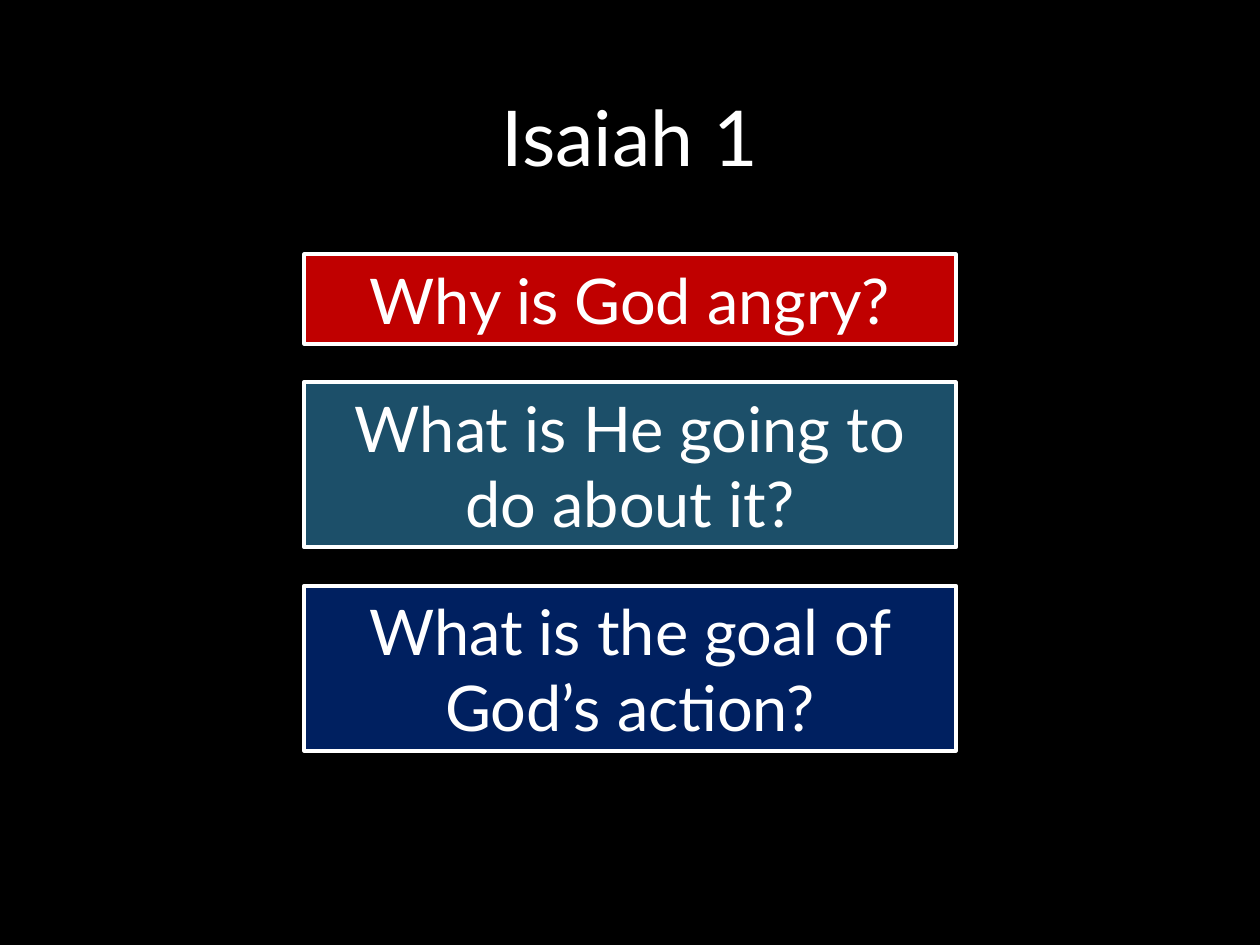
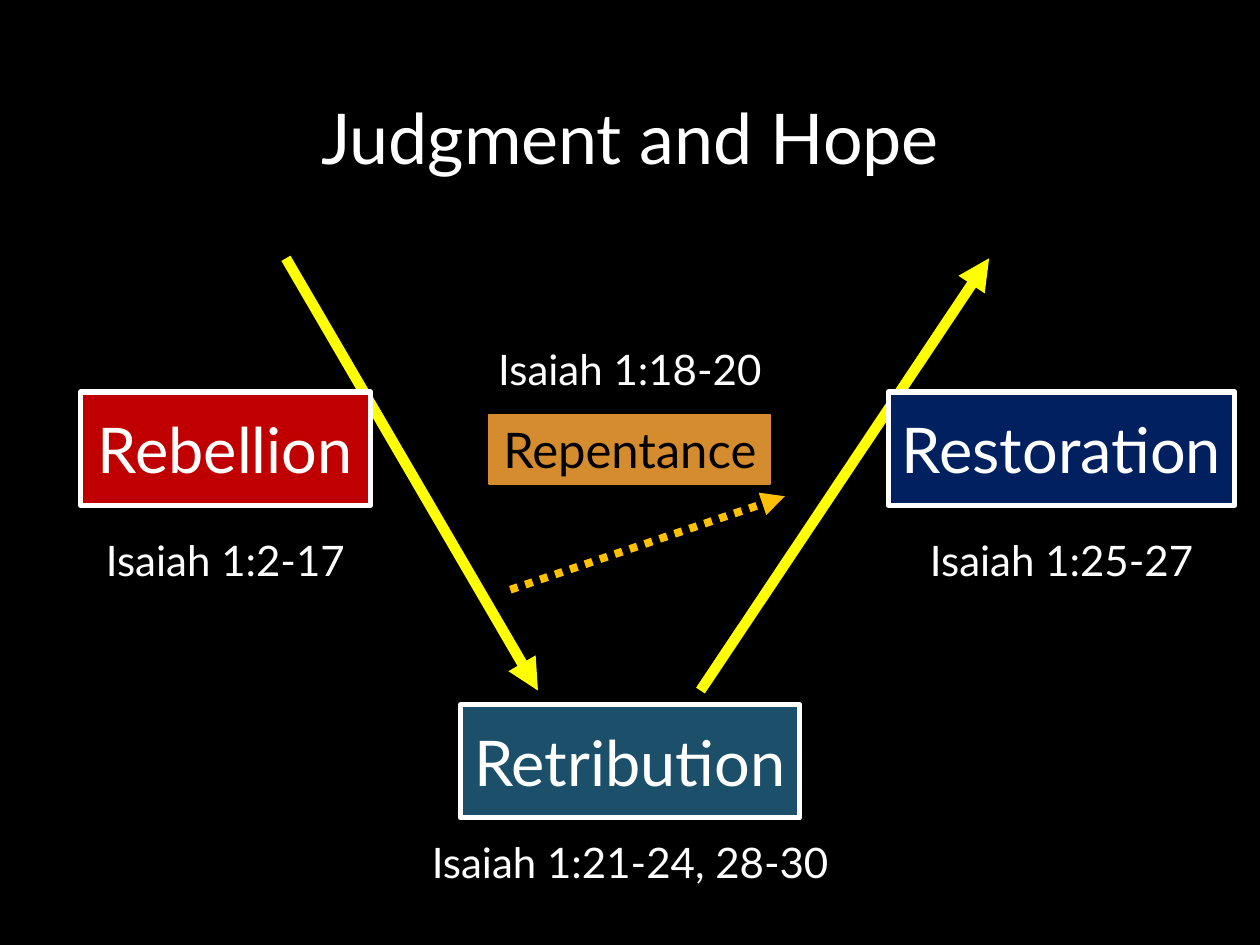
from lxml import etree
from pptx import Presentation
from pptx.dml.color import RGBColor
from pptx.enum.dml import MSO_LINE
from pptx.enum.shapes import MSO_CONNECTOR, MSO_SHAPE
from pptx.enum.text import MSO_ANCHOR, PP_ALIGN
from pptx.oxml.ns import qn
from pptx.util import Pt

WIDTH, HEIGHT = 720, 540
FONT = "Lato"
BLACK, WHITE = "000000", "FFFFFF"
RED, TEAL, NAVY = "C00000", "1C4F69", "002060"
OCHRE, AMBER, YELLOW = "D58C2E", "FFC000", "FFFF00"
TITLE_BOX = (49.7, 28.8, 620.6, 104.4)


def rgb(color):
    return RGBColor.from_string(color)


def write(sp, text, size, color=WHITE, spacing=1.0):
    tf = sp.text_frame
    tf.word_wrap = True
    tf.vertical_anchor = MSO_ANCHOR.MIDDLE
    p = tf.paragraphs[0]
    for name, value in {"alignment": PP_ALIGN.CENTER, "line_spacing": spacing}.items():
        setattr(p, name, value)
    r = p.add_run()
    r.text = text
    for name, value in {"name": FONT, "size": Pt(size)}.items():
        setattr(r.font, name, value)
    r.font.color.rgb = rgb(color)


def add_text(s, box, text, size, spacing=1.0):
    write(s.shapes.add_textbox(*map(Pt, box)), text, size, spacing=spacing)


def add_block(s, box, text, fill, size=36, color=WHITE, line=WHITE, weight=3):
    sp = s.shapes.add_shape(MSO_SHAPE.RECTANGLE, *map(Pt, box))
    sp.shadow.inherit = False
    sp.fill.solid()
    sp.fill.fore_color.rgb = rgb(fill)
    sp.line.color.rgb = rgb(line)
    sp.line.width = Pt(weight)
    write(sp, text, size, color)


def add_arrow(s, start, end, color, weight, dash=None):
    c = s.shapes.add_connector(MSO_CONNECTOR.STRAIGHT, *map(Pt, start + end))
    c.line.color.rgb = rgb(color)
    c.line.width = Pt(weight)
    if dash:
        c.line.dash_style = dash
    props = c._element.spPr
    etree.SubElement(props.find(qn("a:ln")), qn("a:tailEnd"), type="triangle")
    etree.SubElement(props, qn("a:effectLst"))


def add_slide(prs, title, size):
    s = prs.slides.add_slide(prs.slide_layouts[6])
    s.background.fill.solid()
    s.background.fill.fore_color.rgb = rgb(BLACK)
    add_text(s, TITLE_BOX, title, size, spacing=0.9)
    return s


def add_questions(s, left, top, width, gap=22):
    """Stack the questions, each as tall as its lines of text need."""
    for text, fill, height in (
        ("Why is God angry?", RED, 51),
        ("What is He going to do about it?", TEAL, 94.3),
        ("What is the goal of God’s action?", NAVY, 94.3),
    ):
        add_block(s, (left, top, width, height), text, fill, weight=2.25)
        top += height + gap


def add_stage(s, box, name, fill, verses, gap, above=False, **style):
    """Draw a block with its verses centred below or above it."""
    left, top, width, height = box
    add_block(s, box, name, fill, **style)
    label_width, label_height = 248, 36
    label_top = top - gap - label_height if above else top + height + gap
    label_left = left + (width - label_width) / 2
    add_text(s, (label_left, label_top, label_width, label_height), verses, 24)


def add_valley(s, left, top):
    """Draw the descent to retribution and the rise to restoration."""
    def at(x, y, *size):
        return (left + x, top + y, *size)

    add_arrow(s, at(117.4, 0), at(261.4, 247), YELLOW, 6)
    add_arrow(s, at(354.3, 247), at(519.2, 0), YELLOW, 6)
    add_stage(s, at(0, 76.4, 165.6, 64.8), "Rebellion", RED, "Isaiah 1:2-17", 13)
    add_stage(s, at(217.2, 255, 193.7, 64.8), "Retribution", TEAL,
              "Isaiah 1:21-24, 28-30", 7)
    add_stage(s, at(461.6, 76.4, 198, 64.8), "Restoration", NAVY, "Isaiah 1:25-27", 13)
    add_arrow(s, at(245.6, 189.4), at(402.5, 136), AMBER, 4.5, MSO_LINE.ROUND_DOT)
    add_stage(s, at(233.6, 89.3, 160.6, 39.6), "Repentance", OCHRE, "Isaiah 1:18-20", 8,
              above=True, size=28, color=BLACK, line=OCHRE, weight=1)


def main():
    prs = Presentation()
    prs.slide_width, prs.slide_height = Pt(WIDTH), Pt(HEIGHT)
    add_questions(add_slide(prs, "Isaiah 1", 44), 173.8, 145.4, 372.4)
    add_valley(add_slide(prs, "Judgment and Hope", 40), 46, 147.6)
    prs.save("out.pptx")


if __name__ == "__main__":
    main()
